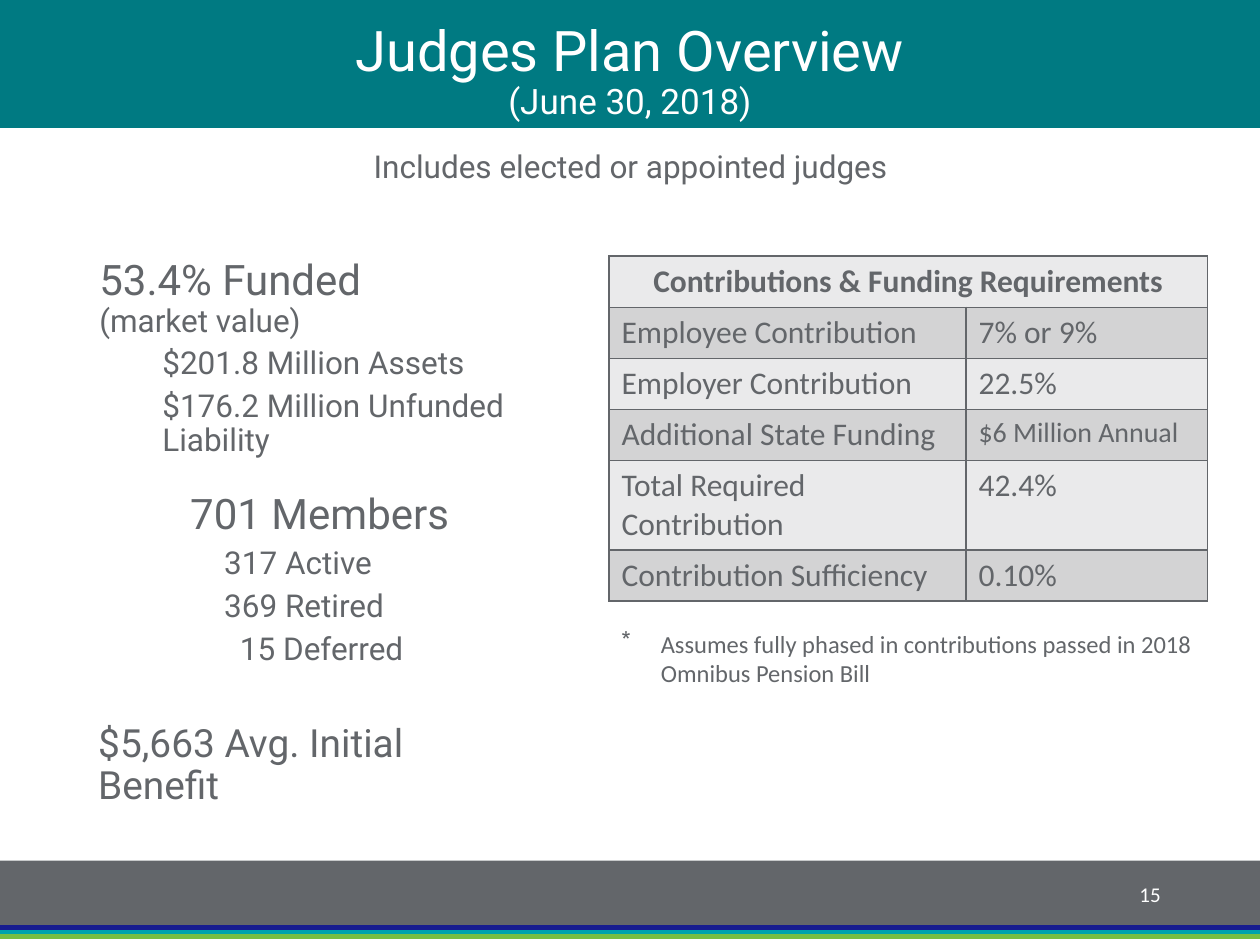
from dataclasses import dataclass

from lxml.etree import SubElement
from pptx import Presentation
from pptx.dml.color import RGBColor
from pptx.enum.shapes import MSO_CONNECTOR, MSO_SHAPE
from pptx.enum.text import MSO_ANCHOR, PP_ALIGN
from pptx.oxml.ns import qn
from pptx.util import Pt


@dataclass(frozen=True)
class Theme:
    white: str = "FFFFFF"
    gray: str = "63666A"
    teal: str = "007A82"
    light: str = "EAEAEB"
    dark: str = "D3D3D4"
    lines: tuple = ("171C8F", "00A3AD", "78BE43")
    head: str = "Roboto"
    body: str = "Calibri"
    title: float = 32
    lead: float = 24
    fact: float = 22.2
    sub: float = 20
    text: float = 18
    cell: float = 16
    note: float = 14
    page: float = 12


T = Theme()
ROWS = [
    ("Employee Contribution", "7% or 9%"),
    ("Employer Contribution", "22.5%"),
    ("Additional State Funding", "$6 Million Annual"),
    ("Total Required Contribution", "42.4%"),
    ("Contribution Sufficiency", "0.10%"),
]


def rgb(code):
    return RGBColor.from_string(code)


def style(para, size, face=T.head, color=T.gray, bold=False):
    font = para.font
    font.name, font.size, font.bold = face, Pt(size), bold
    font.color.rgb = rgb(color)


def indent(para, left, first=0, mark=None):
    props = para._p.get_or_add_pPr()
    props.set("marL", str(Pt(left)))
    props.set("indent", str(Pt(first)))
    if mark:
        SubElement(props, qn("a:buChar")).set("char", mark)


def add_bar(slide, top, high, color):
    bar = slide.shapes.add_shape(
        MSO_SHAPE.RECTANGLE, Pt(0), Pt(top), Pt(720), Pt(high))
    bar.shadow.inherit = False
    bar.fill.solid()
    bar.fill.fore_color.rgb = rgb(color)
    bar.line.fill.background()
    return bar


def add_rule(slide, top, color):
    rule = slide.shapes.add_connector(
        MSO_CONNECTOR.STRAIGHT, Pt(0), Pt(top), Pt(720), Pt(top))
    rule.line.color.rgb = rgb(color)
    rule.line.width = Pt(2.5)
    SubElement(rule._element.spPr, qn("a:effectLst"))


def add_box(slide, left, top, wide, high, anchor=MSO_ANCHOR.TOP):
    frame = slide.shapes.add_textbox(
        Pt(left), Pt(top), Pt(wide), Pt(high)).text_frame
    frame.word_wrap = True
    frame.vertical_anchor = anchor
    return frame


def add_line(frame, text, size, left=0, gap=0, space=0.9,
             align=PP_ALIGN.LEFT, face=T.head, color=T.gray):
    para = frame.paragraphs[0]
    if para.runs:
        para = frame.add_paragraph()
    para.text = text
    para.alignment = align
    para.line_spacing = space
    if gap:
        para.space_before = Pt(gap)
    if left:
        indent(para, left)
    style(para, size, face, color)


def add_title(slide):
    frame = add_bar(slide, 0, 73.2, T.teal).text_frame
    frame.word_wrap = True
    frame.vertical_anchor = MSO_ANCHOR.BOTTOM
    para = frame.paragraphs[0]
    para.alignment = PP_ALIGN.CENTER
    para.line_spacing = 0.9
    style(para, T.title, color=T.white)
    para.add_run().text = "Judges Plan Overview"
    para.add_line_break()
    date = para.add_run()
    date.text = "(June 30, 2018)"
    date.font.size = Pt(T.sub)


def set_cell(cell, text, fill, size=T.text, bold=False):
    cell.fill.solid()
    cell.fill.fore_color.rgb = rgb(fill)
    para = cell.text_frame.paragraphs[0]
    para.text = text
    style(para, size, T.body, bold=bold)
    if bold:
        para.alignment = PP_ALIGN.CENTER


def add_edges(cell):
    props = cell._tc.get_or_add_tcPr()
    for spot, side in enumerate(("lnL", "lnR", "lnT", "lnB")):
        edge = SubElement(props, qn("a:" + side), w=str(Pt(1)))
        fill = SubElement(edge, qn("a:solidFill"))
        SubElement(fill, qn("a:srgbClr"), val=T.gray)
        # Edges come before the fill in a cell
        props.insert(spot, edge)


def add_grid(slide):
    table = slide.shapes.add_table(
        len(ROWS) + 1, 2, Pt(348), Pt(146.4), Pt(342), Pt(197)).table
    for col, wide in zip(table.columns, (204, 138)):
        col.width = Pt(wide)
    for row in table.rows:
        row.height = Pt(29.2)
    table.rows[4].height = Pt(51)

    # Heading over both columns
    table.cell(0, 0).merge(table.cell(0, 1))
    set_cell(table.cell(0, 0), "Contributions & Funding Requirements",
             T.light, bold=True)

    # Banded rows
    for num, (name, value) in enumerate(ROWS, 1):
        fill = T.dark if num % 2 else T.light
        size = T.cell if "Annual" in value else T.text
        set_cell(table.cell(num, 0), name, fill)
        set_cell(table.cell(num, 1), value, fill, size)
    for cell in table.iter_cells():
        add_edges(cell)


def add_note(slide):
    frame = add_box(slide, 348, 355.7, 342, 41)
    para = frame.paragraphs[0]
    para.text = ("Assumes fully phased in contributions passed in 2018 "
                 "Omnibus Pension Bill")
    indent(para, 22.5, -22.5, "*")
    style(para, T.note, T.body)


def main():
    deck = Presentation()
    deck.slide_width, deck.slide_height = Pt(720), Pt(540)
    slide = deck.slides.add_slide(deck.slide_layouts[6])

    # Footer and title bands
    add_bar(slide, 491.8, 48.2, T.gray)
    add_bar(slide, 530, 10, T.white)
    for num, color in enumerate(T.lines):
        add_rule(slide, 530 + 2.6 * num, color)
    add_title(slide)

    # Members
    frame = add_box(slide, 49, 278.6, 214.6, 131.8)
    add_line(frame, "701 Members", T.lead, align=PP_ALIGN.RIGHT)
    for text, left in (("317 Active", 72), ("369 Retired", 72),
                       ("15 Deferred", 81)):
        add_line(frame, text, T.text, left, 5)

    # Subtitle
    frame = add_box(slide, 49.7, 76.3, 621.4, 33.1, MSO_ANCHOR.BOTTOM)
    add_line(frame, "Includes elected or appointed judges", T.text,
             space=1.1, align=PP_ALIGN.CENTER)

    # Funding
    frame = add_box(slide, 49.7, 144.7, 250.6, 137.5)
    add_line(frame, "53.4% Funded", T.lead)
    add_line(frame, "(market value)", T.text)
    for text in ("$201.8 Million Assets", "$176.2 Million Unfunded Liability"):
        add_line(frame, text, T.text, 36, 5)

    # Contributions
    add_grid(slide)
    add_note(slide)

    # Benefit and page number
    frame = add_box(slide, 49, 410.4, 262.8, 36)
    add_line(frame, "$5,663 Avg. Initial Benefit", T.fact)
    frame = add_box(slide, 508.3, 496.8, 162, 28.8, MSO_ANCHOR.MIDDLE)
    add_line(frame, "15", T.page, space=1.0, align=PP_ALIGN.RIGHT,
             face=T.body, color=T.white)

    deck.save("out.pptx")


if __name__ == "__main__":
    main()
